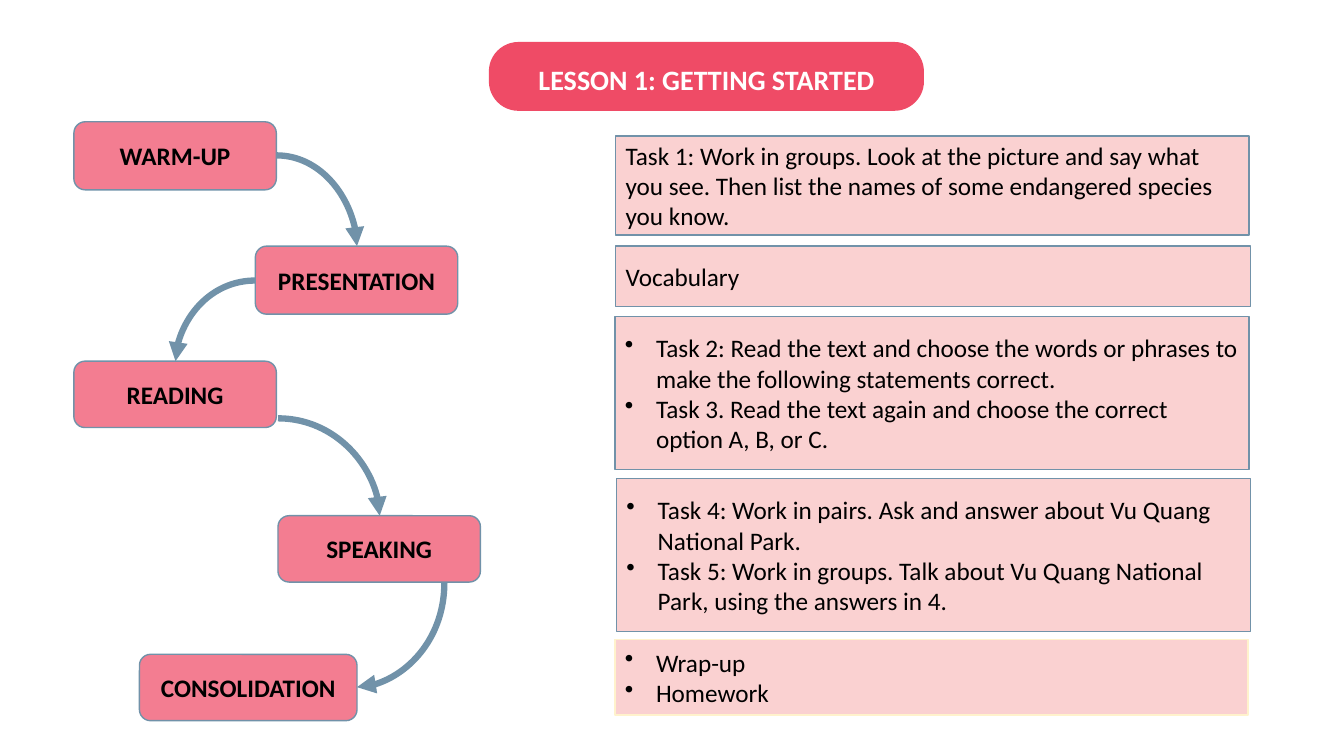
from dataclasses import dataclass

from lxml.etree import SubElement
from pptx import Presentation
from pptx.dml.color import RGBColor
from pptx.enum.shapes import MSO_CONNECTOR, MSO_SHAPE
from pptx.enum.text import MSO_ANCHOR as Anchor, MSO_AUTO_SIZE as AutoSize, PP_ALIGN as Align
from pptx.oxml.ns import qn
from pptx.util import Inches, Pt

WIDTH, HEIGHT = Inches(13.33), Inches(7.5)
COLS, ROWS = 160, 90
FONT = "Calibri"
BLACK, WHITE, STEEL, CREAM = "000000", "FFFFFF", "7192A9", "FFF2CC"
CRIMSON, ROSE, BLUSH = "EF4B66", "F37D91", "F7A5A5"
BULLET_INDENT = Inches(0.31)


@dataclass(frozen=True)
class Box:
    """A rectangle in grid columns and rows."""
    x: float
    y: float
    w: float
    h: float


@dataclass(frozen=True)
class Stage:
    name: str
    box: Box


@dataclass(frozen=True)
class Task:
    lines: tuple[str, ...]
    box: Box
    bulleted: bool = True
    line: str = STEEL


@dataclass(frozen=True)
class Arrow:
    x1: float
    y1: float
    x2: float
    y2: float
    leaves_down: bool = False


PILL = Box(58.2, 5, 51.8, 8.2)
TITLE = Box(62.9, 6.8, 47.2, 5.3)

STAGES = (
    Stage("WARM-UP", Box(8.8, 14.5, 24.1, 8.1)),
    Stage("PRESENTATION", Box(30.4, 29.3, 24.1, 8.1)),
    Stage("READING", Box(8.8, 43, 24.1, 7.9)),
    Stage("SPEAKING", Box(33.1, 61.4, 24.1, 7.9)),
    Stage("CONSOLIDATION", Box(16.6, 77.9, 25.9, 7.9)),
)

TASKS = (
    Task(("Task 1: Work in groups. Look at the picture and say what you see. "
          "Then list the names of some endangered species you know.",),
         Box(73.3, 16.2, 75.4, 11.8), bulleted=False),
    Task(("Vocabulary",), Box(73.3, 29.3, 75.6, 7.2), bulleted=False),
    Task(("Task 2: Read the text and choose the words or phrases to make "
          "the following statements correct.",
          "Task 3. Read the text again and choose the correct option A, B, or C."),
         Box(73.2, 37.7, 75.5, 18.2)),
    Task(("Task 4: Work in pairs. Ask and answer about Vu Quang National Park.",
          "Task 5: Work in groups. Talk about Vu Quang National Park, "
          "using the answers in 4."),
         Box(73.4, 57, 75.5, 18.2)),
    Task(("Wrap-up", "Homework"), Box(73.2, 76.1, 75.4, 9), line=CREAM),
)

ARROWS = (
    Arrow(32.9, 18.5, 42.5, 29.3),
    Arrow(30.4, 33.4, 20.9, 43),
    Arrow(33.1, 49.8, 45.2, 61.4),
    Arrow(52.9, 69.4, 42.5, 81.8, leaves_down=True),
)


def color(value: str) -> RGBColor:
    return RGBColor.from_string(value)


def col(n: float) -> int:
    return round(WIDTH * n / COLS)


def row(n: float) -> int:
    return round(HEIGHT * n / ROWS)


def place(box: Box) -> tuple[int, int, int, int]:
    return col(box.x), row(box.y), col(box.w), row(box.h)


def add_box(slide, kind, box: Box, fill: str, line: str | None = None):
    sp = slide.shapes.add_shape(kind, *place(box))
    sp.shadow.inherit = False
    sp.fill.solid()
    sp.fill.fore_color.rgb = color(fill)
    if line:
        sp.line.color.rgb = color(line)
        sp.line.width = Pt(1)
    else:
        sp.line.fill.background()
    return sp


def write(sp, lines: tuple[str, ...], align, size: int = 18,
          ink: str = BLACK, bold: bool = False, anchor=Anchor.MIDDLE) -> None:
    tf = sp.text_frame
    tf.word_wrap = True
    tf.vertical_anchor = anchor
    tf.text = "\n".join(lines)
    for p in tf.paragraphs:
        p.alignment = align
        p.font.name = FONT
        p.font.size = Pt(size)
        p.font.bold = bold
        p.font.color.rgb = color(ink)


def add_bullets(sp) -> None:
    for p in sp.text_frame.paragraphs:
        props = p._p.get_or_add_pPr()
        props.set("marL", str(BULLET_INDENT))
        props.set("indent", str(-BULLET_INDENT))
        bullet = props.makeelement(qn("a:buChar"), {"char": "•"})
        props.insert_element_before(bullet, "a:tabLst", "a:defRPr", "a:extLst")


def add_title(slide) -> None:
    pill = add_box(slide, MSO_SHAPE.ROUNDED_RECTANGLE, PILL, CRIMSON)
    pill.adjustments[0] = 0.43
    title = slide.shapes.title
    pill.element.addnext(title.element)
    title.left, title.top, title.width, title.height = place(TITLE)
    write(title, ("LESSON 1: GETTING STARTED",), Align.LEFT, 20, WHITE, True, Anchor.TOP)
    title.text_frame.auto_size = AutoSize.SHAPE_TO_FIT_TEXT


def add_stage(slide, stage: Stage) -> None:
    sp = add_box(slide, MSO_SHAPE.ROUNDED_RECTANGLE, stage.box, ROSE, STEEL)
    write(sp, (stage.name,), Align.CENTER, bold=True)


def add_task(slide, task: Task) -> None:
    sp = add_box(slide, MSO_SHAPE.RECTANGLE, task.box, BLUSH, task.line)
    tint = sp.element.spPr.find(f"{qn('a:solidFill')}/{qn('a:srgbClr')}")
    SubElement(tint, qn("a:alpha"), val="50000")
    write(sp, task.lines, Align.LEFT)
    if task.bulleted:
        add_bullets(sp)


def add_arrow(slide, arrow: Arrow) -> None:
    """Draw a quarter curve; one that leaves downwards is turned by 90 degrees."""
    x1, y1, x2, y2 = col(arrow.x1), row(arrow.y1), col(arrow.x2), row(arrow.y2)
    if arrow.leaves_down:
        mid_x, mid_y = (x1 + x2) // 2, (y1 + y2) // 2
        half_w, half_h = abs(y2 - y1) // 2, abs(x2 - x1) // 2
        x1, y1, x2, y2 = mid_x - half_w, mid_y - half_h, mid_x + half_w, mid_y + half_h
    c = slide.shapes.add_connector(MSO_CONNECTOR.CURVE, x1, y1, x2, y2)
    props = c.element.spPr
    props.find(qn("a:prstGeom")).set("prst", "curvedConnector2")
    if arrow.leaves_down:
        props.find(qn("a:xfrm")).set("rot", "5400000")
    c.line.color.rgb = color(STEEL)
    c.line.width = Pt(4.5)
    SubElement(props.find(qn("a:ln")), qn("a:tailEnd"), type="triangle")
    SubElement(props, qn("a:effectLst"))


def main() -> None:
    prs = Presentation()
    prs.slide_width, prs.slide_height = WIDTH, HEIGHT
    slide = prs.slides.add_slide(prs.slide_layouts[5])
    add_title(slide)
    for stage in STAGES:
        add_stage(slide, stage)
    for task in TASKS:
        add_task(slide, task)
    for arrow in ARROWS:
        add_arrow(slide, arrow)
    prs.save("out.pptx")


if __name__ == "__main__":
    main()
